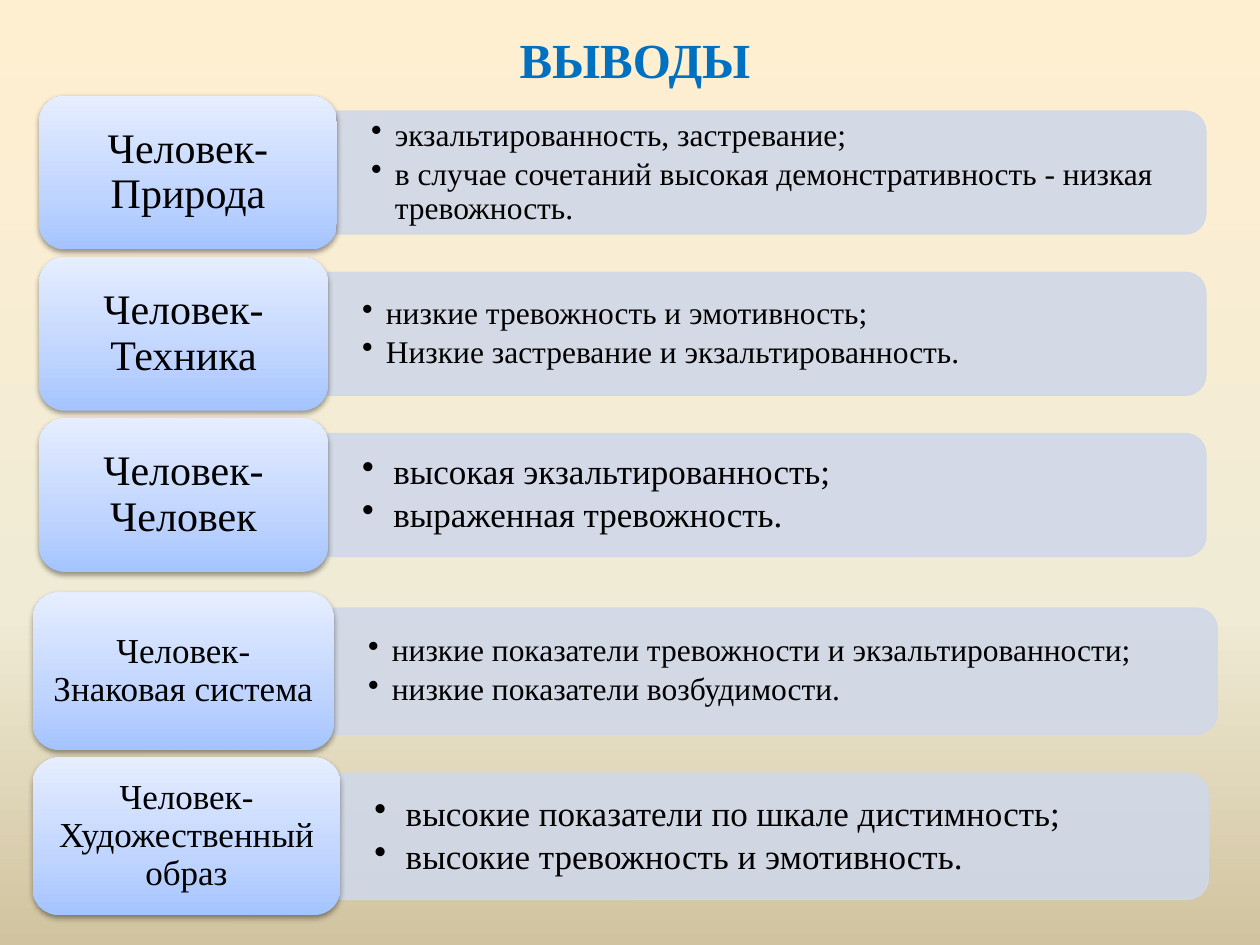
from lxml import etree
from pptx import Presentation
from pptx.dml.color import RGBColor
from pptx.enum.shapes import MSO_SHAPE
from pptx.enum.text import MSO_ANCHOR, PP_ALIGN
from pptx.oxml.ns import qn
from pptx.util import Cm, Pt

CENTER, LEFT = PP_ALIGN.CENTER, PP_ALIGN.LEFT
MIDDLE, TOP = MSO_ANCHOR.MIDDLE, MSO_ANCHOR.TOP
ROUNDED, BAR = MSO_SHAPE.ROUNDED_RECTANGLE, MSO_SHAPE.ROUND_2_SAME_RECTANGLE

# Content
FONT = "Times New Roman"
TITLE = "ВЫВОДЫ"
BACKGROUND = [(0, "FFEFD1"), (65, "F0EBD5"), (100, "D1C39F")]
LABEL_FILL = [(0, "A4C4FF"), (35, "BFD4FF"), (100, "E6EEFF")]
BAR_COLOR = "D0D8E8"

# Groups: left, top, row height, row pitch (cm) and label size (pt)
# Rows: label, label width, right edge of bar (cm), bullet size (pt), bullets
GROUPS = [
    (0.79, 1.93, 3.1, 3.25, 24, [
        ("Человек-Природа", 6, 24.31, 18,
         ["экзальтированность, застревание;",
          "в случае сочетаний высокая демонстративность - низкая тревожность."]),
        ("Человек-Техника", 5.82, 24.31, 18,
         ["низкие тревожность и эмотивность;",
          "Низкие застревание и экзальтированность."]),
        ("Человек-Человек", 5.82, 24.31, 20,
         ["высокая экзальтированность;", "выраженная тревожность."]),
    ]),
    (0.66, 11.94, 3.18, 3.33, 20, [
        ("Человек-Знаковая система", 6.07, 24.54, 18,
         ["низкие показатели тревожности и экзальтированности;",
          "низкие показатели возбудимости."]),
        ("Человек-Художественный образ", 6.2, 24.36, 20,
         ["высокие показатели по шкале дистимность;",
          "высокие тревожность и эмотивность."]),
    ]),
]
BULLET_INDENT = {18: 0.48, 20: 0.63}


def rgb(color):
    return RGBColor.from_string(color)


def add(parent, tag, **attrs):
    return etree.SubElement(parent, qn(tag), {k: str(v) for k, v in attrs.items()})


def set_gradient(fill, element, stops, angle):
    fill.gradient()
    fill.gradient_angle = 360 - angle
    stop_list = element.find(".//" + qn("a:gsLst"))
    for old in list(stop_list):
        stop_list.remove(old)
    for pos, color in stops:
        add(add(stop_list, "a:gs", pos=pos * 1000), "a:srgbClr", val=color)


def add_text(s, lines, box, size, color="000000", bold=False, align=LEFT,
             anchor=MIDDLE, inset=(0.25, 0.13), spacing=None, after=0, indent=0):
    tf = s.shapes.add_textbox(*map(Cm, box)).text_frame
    tf.word_wrap = True
    tf.vertical_anchor = anchor
    tf.margin_left = tf.margin_right = Cm(inset[0])
    tf.margin_top = tf.margin_bottom = Cm(inset[1])
    for i, line in enumerate(lines):
        p = tf.add_paragraph() if i else tf.paragraphs[0]
        p.alignment = align
        p.line_spacing = spacing
        pPr = p._p.get_or_add_pPr()
        if after:
            add(add(pPr, "a:spcAft"), "a:spcPct", val=after * 1000)
        if indent:
            p.level = 1
            pPr.set("marL", str(Cm(indent)))
            pPr.set("indent", str(-Cm(indent)))
            add(pPr, "a:buChar", char="•")
        r = p.add_run()
        r.text = line
        r.font.name, r.font.size, r.font.bold = FONT, Pt(size), bold
        r.font.color.rgb = rgb(color)


def add_bar(s, left, top, width, height):
    # Turned a quarter so that the rounded corners face right
    box = (left + (width - height) / 2, top + (height - width) / 2, height, width)
    sp = s.shapes.add_shape(BAR, *map(Cm, box))
    sp.rotation = 90
    sp.shadow.inherit = False
    sp.fill.solid()
    sp.fill.fore_color.rgb = sp.line.color.rgb = rgb(BAR_COLOR)
    sp.line.width = Pt(0.75)
    for clr in sp._element.spPr.iter(qn("a:srgbClr")):
        add(clr, "a:alpha", val=90000)


def add_label_box(s, box):
    sp = s.shapes.add_shape(ROUNDED, *map(Cm, box))
    sp.line.fill.background()
    set_gradient(sp.fill, sp._element, LABEL_FILL, 270)
    sp.shadow.inherit = False
    effects = sp._element.spPr.find(qn("a:effectLst"))
    shadow = add(effects, "a:outerShdw", blurRad=40000, dist=20000,
                 dir=5400000, rotWithShape=0)
    add(add(shadow, "a:srgbClr", val="000000"), "a:alpha", val=38000)


def add_row(s, left, top, height, label_size, row):
    label, width, right, size, bullets = row
    bar_left, bar_top, bar_height = left + width, top + height * 0.1, height * 0.8
    add_bar(s, bar_left, bar_top, right - bar_left, bar_height)
    add_text(s, bullets,
             (bar_left, bar_top + 0.12, right - bar_left - 0.12, bar_height - 0.24),
             size, inset=(0.69, 0.35), spacing=0.9, after=15,
             indent=BULLET_INDENT[size])
    add_label_box(s, (left, top, width, height))
    add_text(s, [label], (left + 0.15, top + 0.15, width - 0.3, height - 0.3),
             label_size, align=CENTER, spacing=0.9, after=35,
             inset=(label_size * 0.01, label_size * 0.005))


def main():
    prs = Presentation()
    prs.slide_width, prs.slide_height = Cm(25.4), Cm(19.05)
    s = prs.slides.add_slide(prs.slide_layouts[6])
    set_gradient(s.background.fill, s.element, BACKGROUND, 90)
    add_text(s, [TITLE], (1.3, 0.46, 23, 1.45), 28, color="0070C0", bold=True,
             align=CENTER, anchor=TOP)
    for left, top, height, pitch, label_size, rows in GROUPS:
        for i, row in enumerate(rows):
            add_row(s, left, top + i * pitch, height, label_size, row)
    prs.save("out.pptx")


if __name__ == "__main__":
    main()
